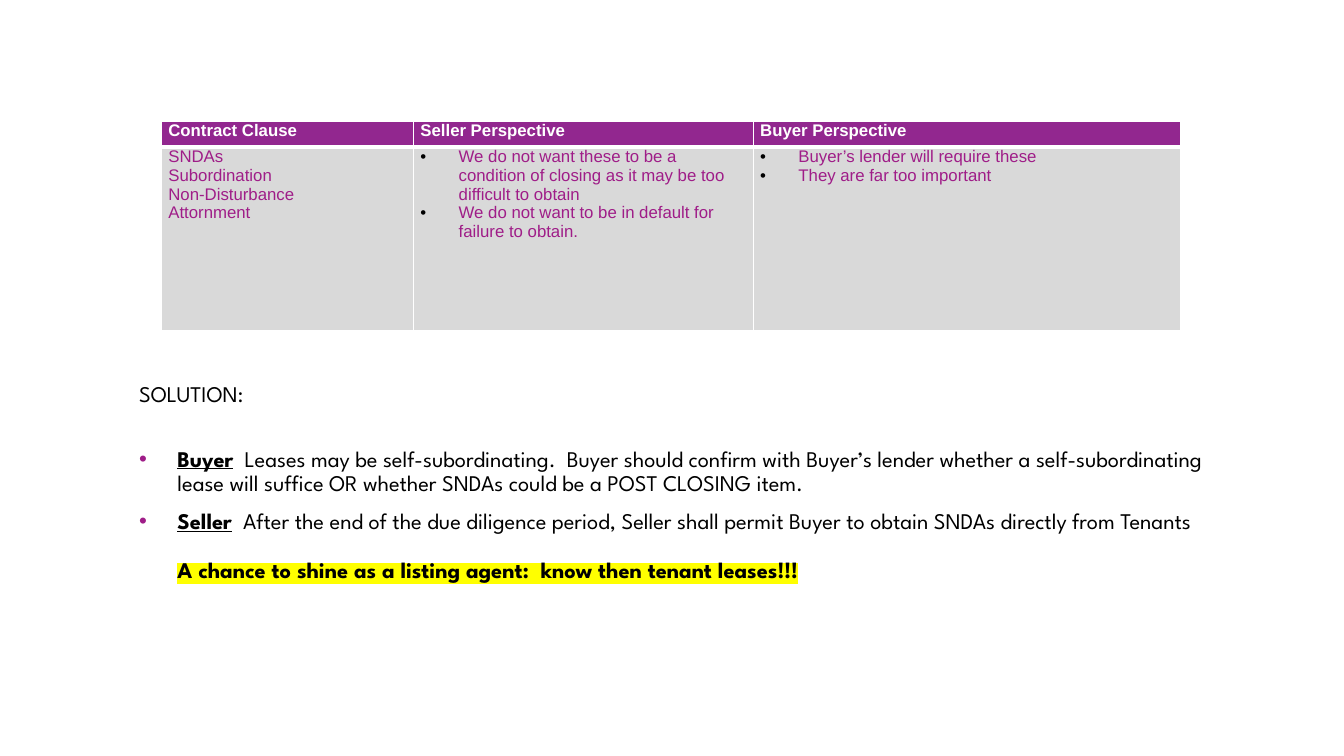
from lxml import etree
from pptx import Presentation
from pptx.dml.color import RGBColor
from pptx.enum import text
from pptx.oxml import ns
from pptx.util import Inches, Pt

PURPLE, PLUM, GREY, WHITE, BLACK = "92278F", "9F1D88", "D9D9D9", "FFFFFF", "000000"
HEADS = ["Contract Clause", "Seller Perspective", "Buyer Perspective"]
CLAUSES = [
    ["SNDAs", "Subordination", "Non-Disturbance", "Attornment"],
    ["We do not want these to be a condition of closing as it may be too difficult to obtain",
     "We do not want to be in default for failure to obtain."],
    ["Buyer’s lender will require these", "They are far too important"],
]
ADVICE = [
    ("Buyer", "  Leases may be self-subordinating.  Buyer should confirm with Buyer’s lender "
     "whether a self-subordinating lease will suffice OR whether SNDAs could be a POST CLOSING item.", 29),
    ("Seller", "  After the end of the due diligence period, Seller shall permit Buyer to obtain "
     "SNDAs directly from Tenants", 10),
]


def paint(target, tone):
    target.fill.solid()
    target.fill.fore_color.rgb = RGBColor.from_string(tone)


def add(parent, tag, **attrs):
    return etree.SubElement(parent, ns.qn(tag), **attrs)


def tint(parent, tone):
    add(parent, "a:srgbClr", val=tone)


def mark(para, left, hang=0, tone=None):
    props = para._p.get_or_add_pPr()
    props.set("marL", str(Inches(left)))
    props.set("indent", str(Inches(-hang)))
    if tone:
        tint(add(props, "a:buClr"), tone)
        add(props, "a:buFont", typeface="Arial")
        add(props, "a:buChar", char="•")
    else:
        add(props, "a:buNone")


def style(para, face, size, tone, bold=None):
    font = para.font
    font.name, font.size, font.bold = face, Pt(size), bold
    font.color.rgb = RGBColor.from_string(tone)


def lines(frame):
    yield frame.paragraphs[0]
    while True:
        yield frame.add_paragraph()


def border(cell, top, bottom):
    props = cell._tc.get_or_add_tcPr()
    for side, width in zip("LRTB", (1, 1, top, bottom)):
        line = add(props, "a:ln" + side, w=str(Pt(width)))
        tint(add(line, "a:solidFill"), WHITE)


def fill_cell(cell, items, head, listed):
    cell.margin_left = cell.margin_right = Inches(0.07)
    cell.margin_top = cell.margin_bottom = 0
    border(cell, 1 if head else 3, 3 if head else 1)
    paint(cell, PURPLE if head else GREY)
    for item, para in zip(items, lines(cell.text_frame)):
        para.text = item
        if listed:
            mark(para, 0.38, 0.38, BLACK)
        style(para, "Arial", 12, WHITE if head else PLUM, head)


def add_grid(slide):
    frame = slide.shapes.add_table(2, 3, Inches(1.6), Inches(1.2), Inches(10.12), Inches(2.08))
    table = frame.table
    for col, width in zip(table.columns, (2.5, 3.37, 4.24)):
        col.width = Inches(width)
    for row, height in zip(table.rows, (0.26, 1.82)):
        row.height = Inches(height)
    for at, (head, items) in enumerate(zip(HEADS, CLAUSES)):
        fill_cell(table.cell(0, at), [head], True, False)
        fill_cell(table.cell(1, at), items, False, at > 0)


def add_run(para, words, bold=False, under=None):
    run = para.add_run()
    run.text = words
    run.font.bold, run.font.underline = bold, under
    return run


def space(para, before):
    para.line_spacing = 0.9
    para.space_before = Pt(before)
    style(para, "League Spartan", 16, BLACK)


def fill_body(body):
    body.left, body.top = Inches(1.16), Inches(3.75)
    body.width, body.height = Inches(11.01), Inches(2.89)
    frame = body.text_frame
    frame.auto_size = text.MSO_AUTO_SIZE.NONE
    frame.vertical_anchor = text.MSO_ANCHOR.TOP
    frame.word_wrap = True
    rows = lines(frame)

    intro = next(rows)
    add_run(intro, "SOLUTION:")
    mark(intro, 0.12)
    space(intro, 0)

    for party, words, before in ADVICE:
        para = next(rows)
        add_run(para, party, True, True)
        add_run(para, words)
        mark(para, 0.5, 0.38, PLUM)
        space(para, before)

    tip = next(rows)
    run = add_run(tip, "A chance to shine as a listing agent:  know then tenant leases!!!", True)
    tint(add(run._r.get_or_add_rPr(), "a:highlight"), "FFFF00")
    mark(tip, 0.5)
    space(tip, 18)


def main():
    deck = Presentation()
    deck.slide_width, deck.slide_height = Inches(13.33), Inches(7.5)
    slide = deck.slides.add_slide(deck.slide_layouts[1])
    paint(slide.background, WHITE)
    title = slide.shapes.title._element
    title.getparent().remove(title)
    fill_body(slide.placeholders[1])
    add_grid(slide)
    deck.save("out.pptx")


if __name__ == "__main__":
    main()
